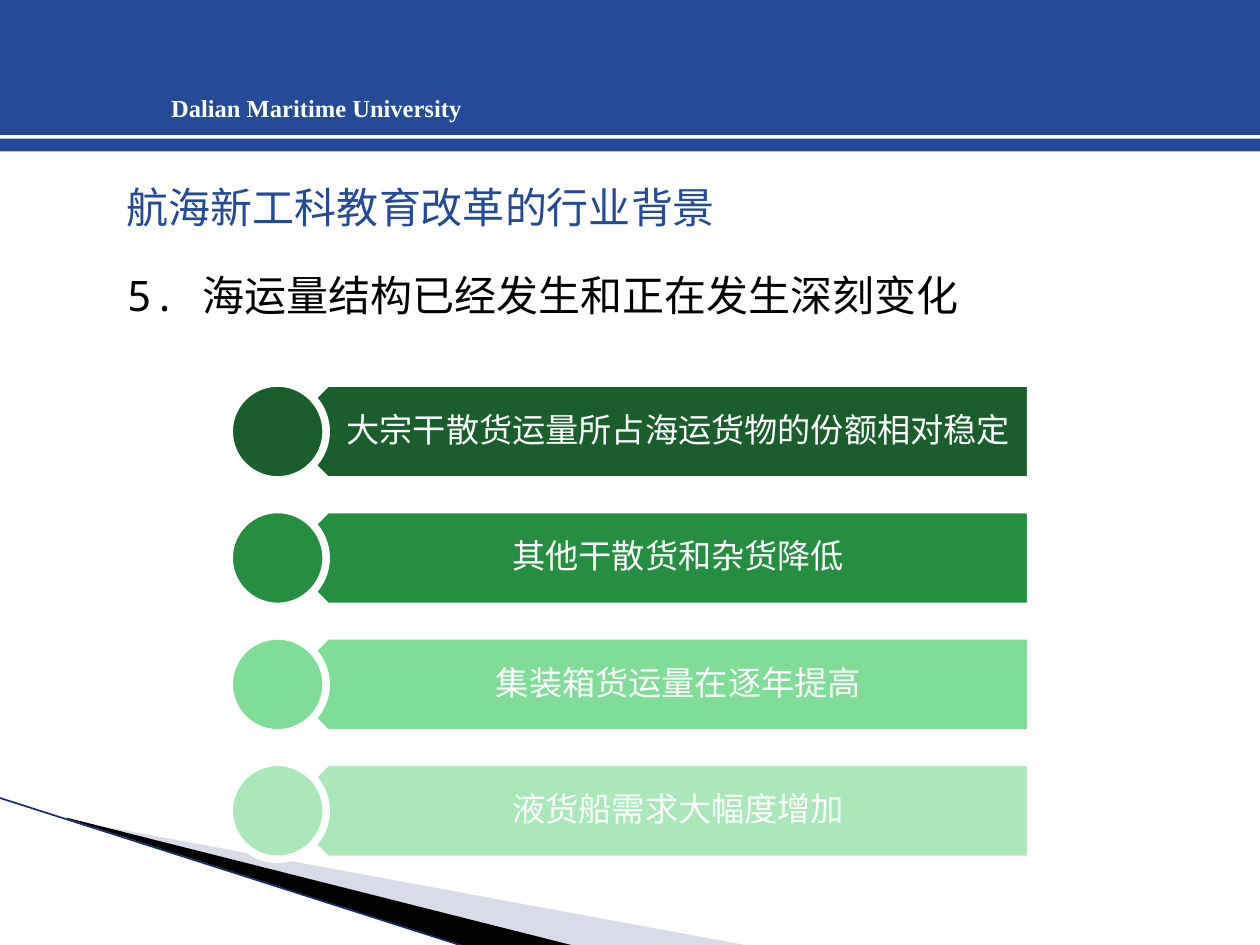
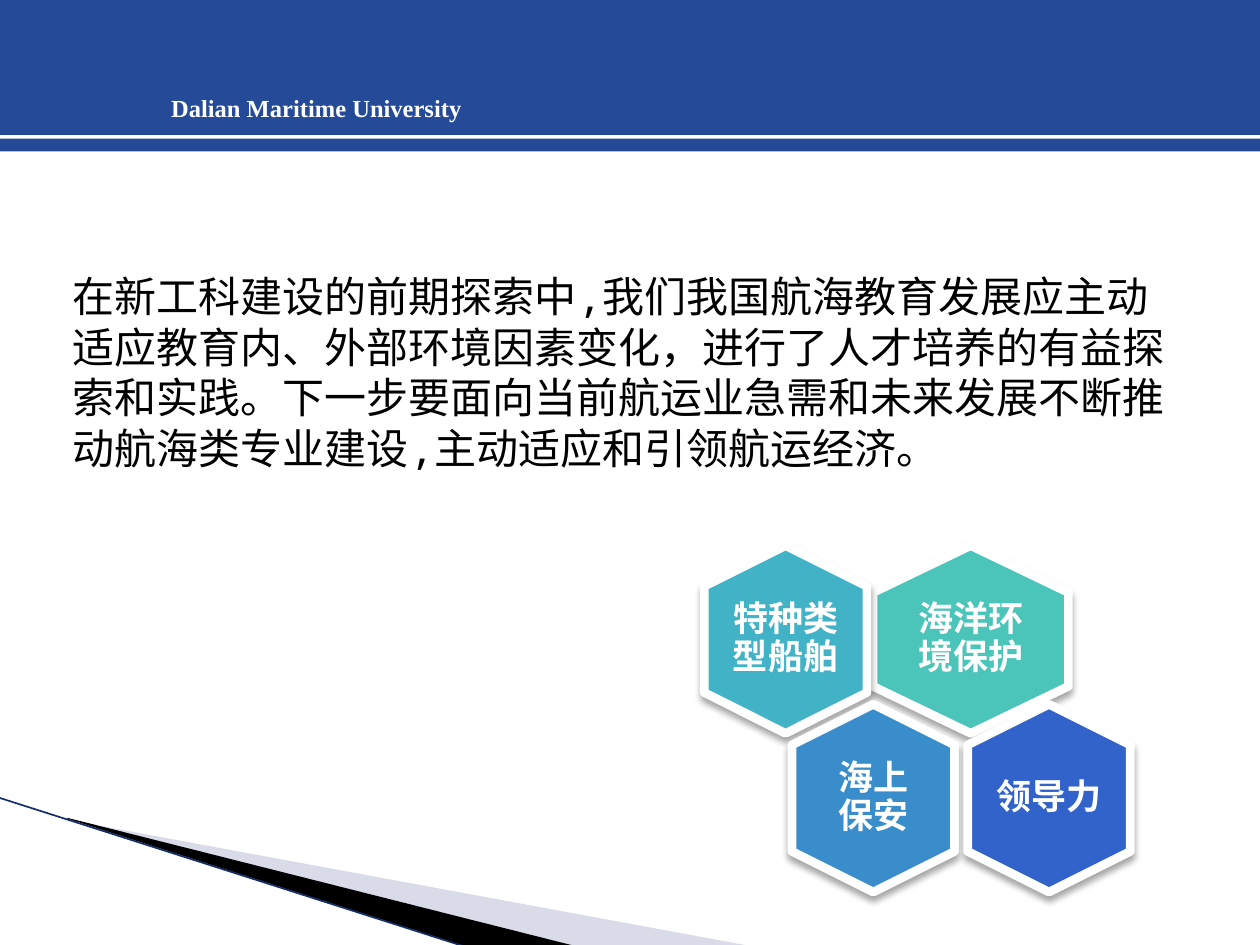
import pptx
import pptx.dml.color
import pptx.enum.shapes
import pptx.enum.text
import pptx.oxml
import pptx.oxml.ns
import pptx.util

Pt = pptx.util.Pt
RGBColor = pptx.dml.color.RGBColor
Shape = pptx.enum.shapes.MSO_SHAPE
Align = pptx.enum.text.PP_ALIGN
Anchor = pptx.enum.text.MSO_ANCHOR

# Shared style
WHITE = RGBColor(0xFF, 0xFF, 0xFF)
BLACK = RGBColor(0, 0, 0)
BAND_BLUE = RGBColor(0x25, 0x4A, 0x97)
STRIPE_BLUE = RGBColor(0x24, 0x4A, 0x97)
EDGE_NAVY = RGBColor(0x14, 0x2E, 0x6B)
WEDGE_GREY = RGBColor(0xA1, 0xA7, 0xC6)
GREENS = [RGBColor(0x19, 0x5E, 0x2B), RGBColor(0x26, 0x8E, 0x41),
          RGBColor(0x7F, 0xDD, 0x97), RGBColor(0xAA, 0xE8, 0xBA)]
TEAL = RGBColor(0x4B, 0xC5, 0xB9)
CYAN = RGBColor(0x42, 0xB2, 0xC7)
SKY = RGBColor(0x38, 0x8D, 0xCA)
ROYAL = RGBColor(0x31, 0x63, 0xCA)
BODY_FONT = "Noto Sans Mono"
SERIF_FONT = "Times New Roman"

# Green list: equal rows
ROW_TOP, ROW_PITCH, ROW_HEIGHT = 218.9, 72.25, 55.4
CARGO_TRENDS = ["大宗干散货运量所占海运货物的份额相对稳定", "其他干散货和杂货降低",
                "集装箱货运量在逐年提高", "液货船需求大幅度增加"]

# Honeycomb: text, colour, centre x, centre y, width, text width, inset
HEX_HEIGHT = 107.3
HONEYCOMB = [("海洋环境保护", TEAL, 554.7, 365.4, 111.6, 74.2, 5.8),
             ("特种类型船舶", CYAN, 448.9, 365.4, 92.9, 64.1, 0),
             ("海上保安", SKY, 499, 456.1, 92.9, 64.1, 5.8),
             ("领导力", ROYAL, 599.4, 456.1, 92.9, 64.1, 0)]


def xml(text):
    return pptx.oxml.parse_xml(text.replace(">", f" {pptx.oxml.ns.nsdecls('a')}>", 1))


def format_paragraph(para, size, color, font=BODY_FONT, bold=False):
    for span in para.runs:
        span.font.size = Pt(size)
        span.font.bold = bold
        span.font.name = font
        span.font.color.rgb = color
        latin = span.font._element.find(pptx.oxml.ns.qn("a:latin"))
        latin.addnext(xml(f'<a:ea typeface="{font}"></a:ea>'))


def add_text(page, place, text, size, color, font=BODY_FONT, bold=False, wrap=True):
    box = page.shapes.add_textbox(*map(Pt, place))
    box.text_frame.word_wrap = wrap
    box.text_frame.text = text
    for para in box.text_frame.paragraphs:
        format_paragraph(para, size, color, font, bold)
    return box


def add_label(page, place, text, size, insets, bold=False):
    """Centred white label laid over a shape."""
    frame = add_text(page, place, text, size, WHITE, bold=bold).text_frame
    frame.vertical_anchor = Anchor.MIDDLE
    (frame.margin_left, frame.margin_top,
     frame.margin_right, frame.margin_bottom) = map(Pt, insets)
    frame.paragraphs[0].alignment = Align.CENTER
    frame.paragraphs[0].line_spacing = 0.9


def paint(shape, fill, line_width=0):
    shape.shadow.inherit = False
    shape.fill.solid()
    shape.fill.fore_color.rgb = fill
    if line_width:
        shape.line.color.rgb = WHITE
        shape.line.width = Pt(line_width)
    else:
        shape.line.fill.background()


def add_filled(page, kind, place, fill, line_width=0, rotation=0):
    shape = page.shapes.add_shape(kind, *map(Pt, place))
    shape.rotation = rotation
    paint(shape, fill, line_width)
    return shape


def add_wedge(page, points, fill):
    corners = [(Pt(x), Pt(y)) for x, y in points]
    builder = page.shapes.build_freeform(*corners[0], scale=1.0)
    builder.add_line_segments(corners[1:], close=True)
    wedge = builder.convert_to_shape()
    paint(wedge, fill)
    return wedge


def add_frame(page):
    """Corner wedges, header band and university name."""
    grey = add_wedge(page, [(39.6, 468.7), (428.4, 540.5), (328.3, 540.5), (39.6, 468)],
                     WEDGE_GREY)
    color = grey.fill._xPr.find(".//" + pptx.oxml.ns.qn("a:srgbClr"))
    color.append(xml('<a:alpha val="40000"></a:alpha>'))
    add_wedge(page, [(38.2, 467.3), (329, 540.7), (267.8, 541.4), (38.9, 468)], BLACK)
    edge = page.shapes.add_connector(pptx.enum.shapes.MSO_CONNECTOR.STRAIGHT,
                                     Pt(-0.7), Pt(455.8), Pt(267.1), Pt(541.4))
    edge.line.color.rgb = EDGE_NAVY
    edge.line.width = Pt(0.95)
    edge._element.spPr.append(xml("<a:effectLst></a:effectLst>"))
    add_filled(page, Shape.RECTANGLE, (0, -0.7, 720, 77.8), BAND_BLUE)
    add_filled(page, Shape.RECTANGLE, (0, 79.2, 720, 7.4), STRIPE_BLUE)
    add_text(page, (90.7, 49.7, 185.8, 24), "Dalian Maritime University", 14, WHITE,
             SERIF_FONT, bold=True, wrap=False)


def add_trend_row(page, top, text, color):
    add_filled(page, Shape.PENTAGON, (159.1, top, 429.8, ROW_HEIGHT), color, 4.33, 180)
    add_label(page, (172.7, top, 416.3, ROW_HEIGHT), text, 19, (24.5, 5.8, 10.8, 5.8))
    add_filled(page, Shape.OVAL, (131, top, ROW_HEIGHT, ROW_HEIGHT), color, 4.33)


def add_hexagon(page, text, color, center_x, center_y, width, text_width, inset):
    # Turned a quarter, so the unrotated frame swaps width and height
    place = (center_x - HEX_HEIGHT / 2, center_y - width / 2, HEX_HEIGHT, width)
    cell = add_filled(page, Shape.HEXAGON, place, color, 5, 90)
    cell._element.spPr.find(pptx.oxml.ns.qn("a:effectLst")).append(xml(
        '<a:outerShdw blurRad="50800" dist="38100" dir="5400000" rotWithShape="0">'
        '<a:srgbClr val="000000"><a:alpha val="35000"/></a:srgbClr></a:outerShdw>'))
    label_height = 73.4
    add_label(page, (center_x - text_width / 2, center_y - label_height / 2,
                     text_width, label_height), text, 20, [inset] * 4, bold=True)


def build_background_slide(page):
    add_frame(page)
    heading = add_text(page, (65.5, 100.1, 516.2, 87.1),
                       "航海新工科教育改革的行业背景\n5. 海运量结构已经发生和正在发生深刻变化",
                       24, BAND_BLUE)
    point = heading.text_frame.paragraphs[1]
    point.space_before = Pt(21.7)
    format_paragraph(point, 24, BLACK)
    for row, (text, color) in enumerate(zip(CARGO_TRENDS, GREENS)):
        add_trend_row(page, ROW_TOP + row * ROW_PITCH, text, color)


def build_outlook_slide(page):
    add_frame(page)
    add_text(page, (34.6, 151.2, 652.3, 123.8),
             "在新工科建设的前期探索中,我们我国航海教育发展应主动适应教育内、外部环境因素变化，"
             "进行了人才培养的有益探索和实践。下一步要面向当前航运业急需和未来发展不断推动航海类"
             "专业建设,主动适应和引领航运经济。", 24, BLACK)
    for cell in HONEYCOMB:
        add_hexagon(page, *cell)


def main():
    deck = pptx.Presentation()
    deck.slide_width, deck.slide_height = Pt(720), Pt(540)
    for build in (build_background_slide, build_outlook_slide):
        build(deck.slides.add_slide(deck.slide_layouts[6]))
    deck.save("out.pptx")


if __name__ == "__main__":
    main()
